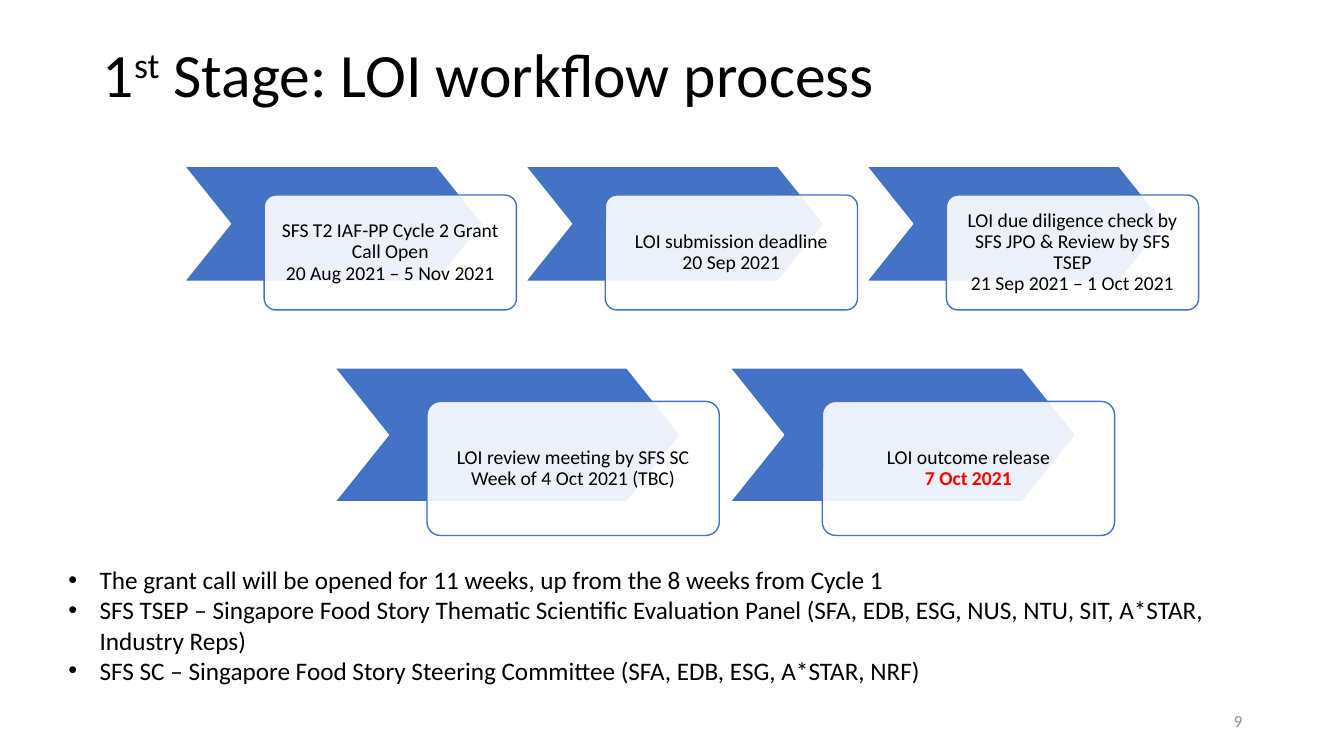
from lxml import etree
from pptx import Presentation
from pptx.dml.color import RGBColor
from pptx.enum.shapes import MSO_SHAPE
from pptx.enum.text import MSO_ANCHOR, MSO_AUTO_SIZE, PP_ALIGN
from pptx.oxml.ns import qn
from pptx.util import Pt

PX = 9144  # 100 px to the inch
FONT = "Calibri"
BLUE = RGBColor(0x44, 0x72, 0xC4)
WHITE = RGBColor(0xFF, 0xFF, 0xFF)
BLACK = RGBColor(0, 0, 0)
RED = RGBColor(0xFF, 0, 0)
GRAY = RGBColor(0x8C, 0x8C, 0x8C)
CHEVRON, ROUNDED = MSO_SHAPE.CHEVRON, MSO_SHAPE.ROUNDED_RECTANGLE
MIDDLE = MSO_ANCHOR.MIDDLE
LEFT, CENTER, RIGHT = PP_ALIGN.LEFT, PP_ALIGN.CENTER, PP_ALIGN.RIGHT
NO_FIT = MSO_AUTO_SIZE.NONE

# Each step: description, date, date is highlighted
OPENING_STEPS = [
    ("SFS T2 IAF-PP Cycle 2 Grant Call Open", "20 Aug 2021 – 5 Nov 2021", False),
    ("LOI submission deadline", "20 Sep 2021", False),
    ("LOI due diligence check by SFS JPO & Review by SFS TSEP",
     "21 Sep 2021 – 1 Oct 2021", False),
]
CLOSING_STEPS = [
    ("LOI review meeting by SFS SC", "Week of 4 Oct 2021 (TBC)", False),
    ("LOI outcome release", "7 Oct 2021", True),
]
NOTES = [
    "The grant call will be opened for 11 weeks, up from the 8 weeks from Cycle 1",
    "SFS TSEP – Singapore Food Story Thematic Scientific Evaluation Panel "
    "(SFA, EDB, ESG, NUS, NTU, SIT, A*STAR, Industry Reps)",
    "SFS SC – Singapore Food Story Steering Committee (SFA, EDB, ESG, A*STAR, NRF)",
]


def px(*lengths):
    return [round(length * PX) for length in lengths]


def style(paragraph, size, color=BLACK, align=LEFT):
    paragraph.alignment = align
    paragraph.font.name = FONT
    paragraph.font.size = Pt(size)
    paragraph.font.color.rgb = color


def add_title(slide, box):
    title = slide.shapes.title
    title.left, title.top, title.width, title.height = px(*box)
    frame = title.text_frame
    frame.vertical_anchor = MIDDLE
    frame.auto_size = NO_FIT
    heading = frame.paragraphs[0]
    heading.line_spacing = 0.9
    style(heading, 44)
    heading.add_run().text = "1"
    ordinal = heading.add_run()
    ordinal.text = "st"
    ordinal.font._element.set("baseline", "30000")
    heading.add_run().text = " Stage: LOI workflow process"


def add_block(slide, kind, box, adjustment, fill, line):
    block = slide.shapes.add_shape(kind, *px(*box))
    block.shadow.inherit = False
    block.adjustments[0] = adjustment
    block.fill.solid()
    block.fill.fore_color.rgb = fill
    block.line.color.rgb = line
    block.line.width = Pt(1)
    return block


def add_step(slide, box, step):
    left, top, width, height = box
    description, date, highlighted = step
    add_block(slide, CHEVRON, box, 0.4, BLUE, WHITE)

    # Translucent card, shifted down and right over the chevron
    card_box = (left + 0.267 * width, top + 0.25 * height, 0.845 * width, height)
    card = add_block(slide, ROUNDED, card_box, 0.1, WHITE, BLUE)
    color = card.fill._xPr.find(".//" + qn("a:srgbClr"))
    etree.SubElement(color, qn("a:alpha"), val="90000")

    frame = card.text_frame
    frame.word_wrap = True
    frame.vertical_anchor = MIDDLE
    frame.margin_left, frame.margin_right = px(11, 11)
    frame.margin_top, frame.margin_bottom = px(11, 11)
    label = frame.paragraphs[0]
    label.line_spacing = 0.9
    style(label, 14, align=CENTER)
    label.add_run().text = description
    label.add_line_break()
    date_run = label.add_run()
    date_run.text = date
    if highlighted:
        date_run.font.bold = True
        date_run.font.color.rgb = RED


def add_step_row(slide, first_box, steps):
    left, top, width, height = first_box
    pitch = 1.143 * width
    for index, step in enumerate(steps):
        add_step(slide, (left + index * pitch, top, width, height), step)


def add_notes_list(slide, box):
    frame = slide.shapes.add_textbox(*px(*box)).text_frame
    frame.word_wrap = True
    indent, = px(31)
    for index, note in enumerate(NOTES):
        item = frame.add_paragraph() if index else frame.paragraphs[0]
        item.text = note
        style(item, 18)
        properties = item._p.get_or_add_pPr()
        properties.set("marL", str(indent))
        properties.set("indent", str(-indent))
        bullet_font = etree.Element(qn("a:buFont"), typeface="Arial")
        bullet = etree.Element(qn("a:buChar"), char="•")
        properties.insert(0, bullet_font)
        properties.insert(1, bullet)


def add_page_number(slide, box):
    frame = slide.shapes.add_textbox(*px(*box)).text_frame
    frame.word_wrap = True
    frame.vertical_anchor = MIDDLE
    number = frame.paragraphs[0]
    number.text = "9"
    style(number, 12, GRAY, RIGHT)


def main():
    deck = Presentation()
    deck.slide_width, deck.slide_height = px(1333, 750)
    slide = deck.slides.add_slide(deck.slide_layouts[5])
    add_title(slide, (92, 4, 1150, 145))
    add_step_row(slide, (183, 165, 296, 114), OPENING_STEPS)
    add_step_row(slide, (332, 365, 343, 133), CLOSING_STEPS)
    add_notes_list(slide, (58, 555, 1195, 131))
    add_page_number(slide, (942, 695, 300, 40))
    deck.save("out.pptx")


if __name__ == "__main__":
    main()
